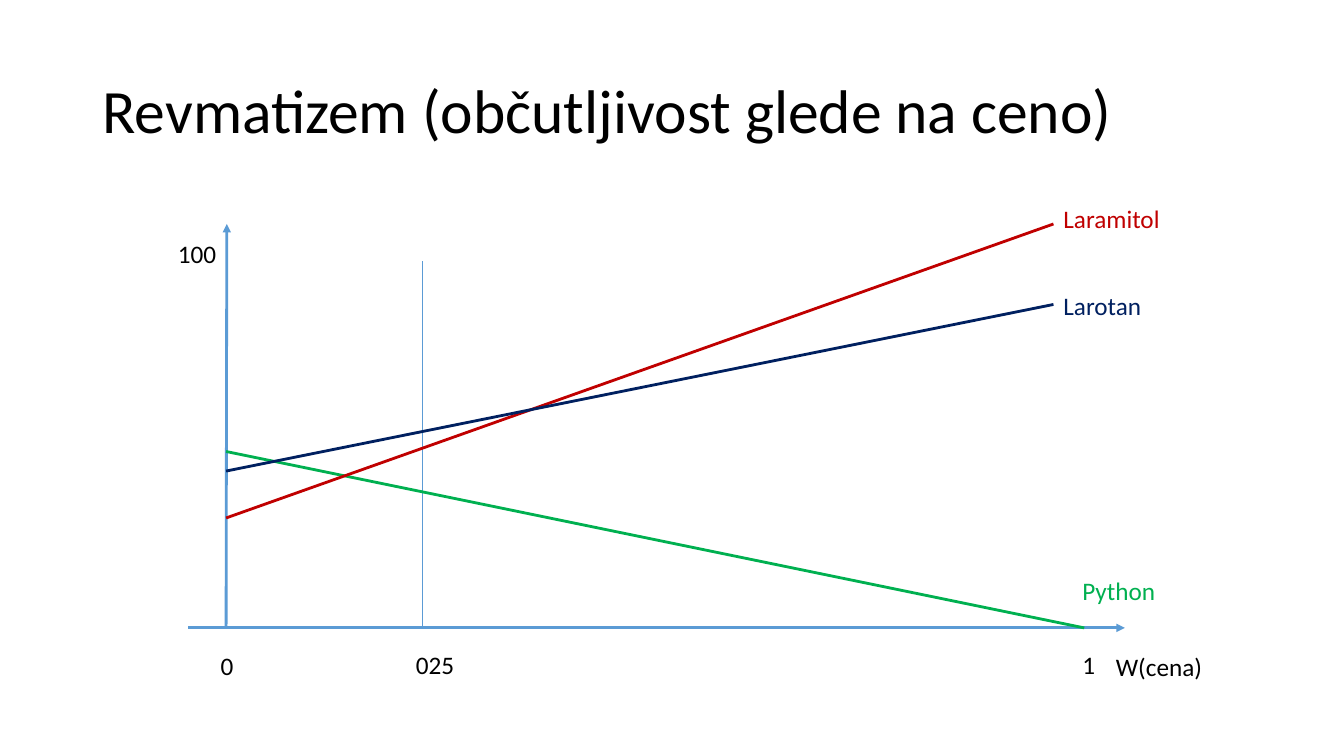
from lxml.etree import SubElement
from pptx import Presentation
from pptx.dml.color import RGBColor
from pptx.enum.shapes import MSO_CONNECTOR
from pptx.enum.text import MSO_ANCHOR, MSO_AUTO_SIZE, PP_ALIGN
from pptx.oxml.ns import qn
from pptx.util import Pt

TITLE = "Revmatizem (občutljivost glede na ceno)"

THEME = {
    "font": "Calibri",
    "title_size": 44,
    "label_size": 18,
    "text": "000000",
    "axis": "5B9BD5",
    "python": "00B050",
    "laramitol": "C00000",
    "larotan": "002060",
}

# Plot frame, in points
ORIGIN_X, BASELINE, TOP = 161.5, 448.5, 160
RIGHT = 752.5
LABEL_HEIGHT = 29

# start, end, colour, width, arrowhead
AXES = [
    ((ORIGIN_X, BASELINE), (ORIGIN_X + 0.5, TOP), "axis", 2, True),
    ((134.5, BASELINE), (803.5, BASELINE), "axis", 2, True),
]
WEIGHT_MARK = [((301.5, BASELINE), (301.5, 186.5), "axis", 0.5, False)]
ALTERNATIVES = [
    ((774.5, BASELINE), (ORIGIN_X, 322.5), "python", 2, False),
    ((RIGHT, TOP), (ORIGIN_X, 370), "laramitol", 2, False),
    ((RIGHT, 217.5), (ORIGIN_X, 336.5), "larotan", 2, False),
]

# wording, left, top, width, colour
LABELS = [
    ("W(cena)", 790, 462, 77, "text"),
    ("1", 766, 460, 24, "text"),
    ("0", 150.5, 461, 24, "text"),
    ("100", 120, 166.5, 42.5, "text"),
    ("025", 290, 460, 42.5, "text"),
    ("Python", 766, 407.5, 67, "python"),
    ("Laramitol", RIGHT, 142, 84, "laramitol"),
    ("Larotan", RIGHT, 204, 70.5, "larotan"),
]


def colour(key):
    return RGBColor.from_string(THEME[key])


def set_all(target, values):
    for name, value in values.items():
        setattr(target, name, value)


def write(shape, wording, size, colour_key, frame_format, spacing=1.0):
    frame = shape.text_frame
    frame.text = wording
    set_all(frame, frame_format)
    paragraph = frame.paragraphs[0]
    set_all(paragraph, {"alignment": PP_ALIGN.LEFT, "line_spacing": spacing})
    font = paragraph.runs[0].font
    set_all(font, {"name": THEME["font"], "size": Pt(THEME[size])})
    font.color.rgb = colour(colour_key)


def add_line(slide, start, end, colour_key, width, arrow):
    connector = slide.shapes.add_connector(
        MSO_CONNECTOR.STRAIGHT, *(Pt(value) for value in start + end))
    connector.line.color.rgb = colour(colour_key)
    connector.line.width = Pt(width)
    properties = connector._element.spPr
    if arrow:
        SubElement(properties.find(qn("a:ln")), qn("a:tailEnd"), type="triangle")
    SubElement(properties, qn("a:effectLst"))


def add_label(slide, wording, left, top, width, colour_key):
    label = slide.shapes.add_textbox(Pt(left), Pt(top), Pt(width), Pt(LABEL_HEIGHT))
    write(label, wording, "label_size", colour_key,
          {"word_wrap": False, "auto_size": MSO_AUTO_SIZE.SHAPE_TO_FIT_TEXT})


def main():
    presentation = Presentation()
    set_all(presentation, {"slide_width": Pt(960), "slide_height": Pt(540)})
    slide = presentation.slides.add_slide(presentation.slide_layouts[5])

    title = slide.shapes.title
    set_all(title, {"left": Pt(66), "top": Pt(28.75),
                    "width": Pt(828), "height": Pt(104.5)})
    write(title, TITLE, "title_size", "text",
          {"word_wrap": True, "auto_size": MSO_AUTO_SIZE.NONE,
           "vertical_anchor": MSO_ANCHOR.MIDDLE}, spacing=0.9)

    for line in AXES + WEIGHT_MARK + ALTERNATIVES:
        add_line(slide, *line)
    for label in LABELS:
        add_label(slide, *label)

    presentation.save("out.pptx")


if __name__ == "__main__":
    main()
